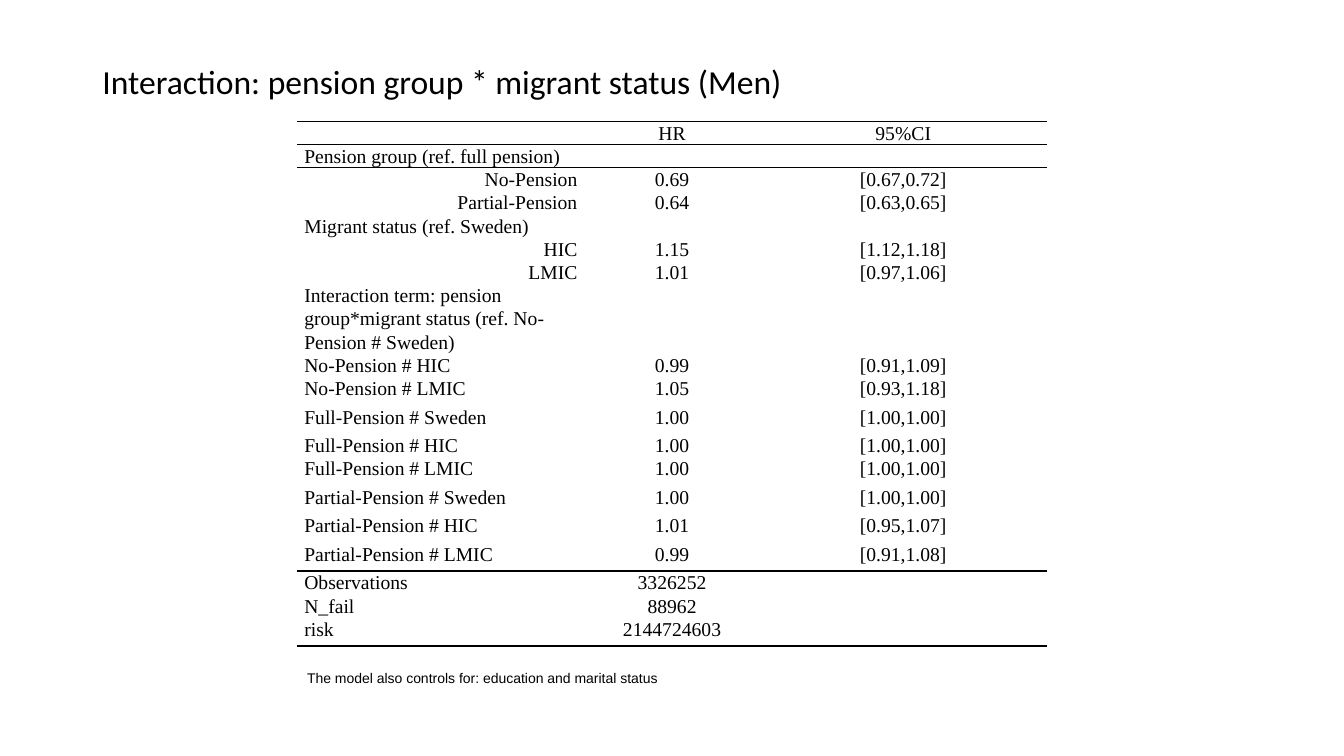
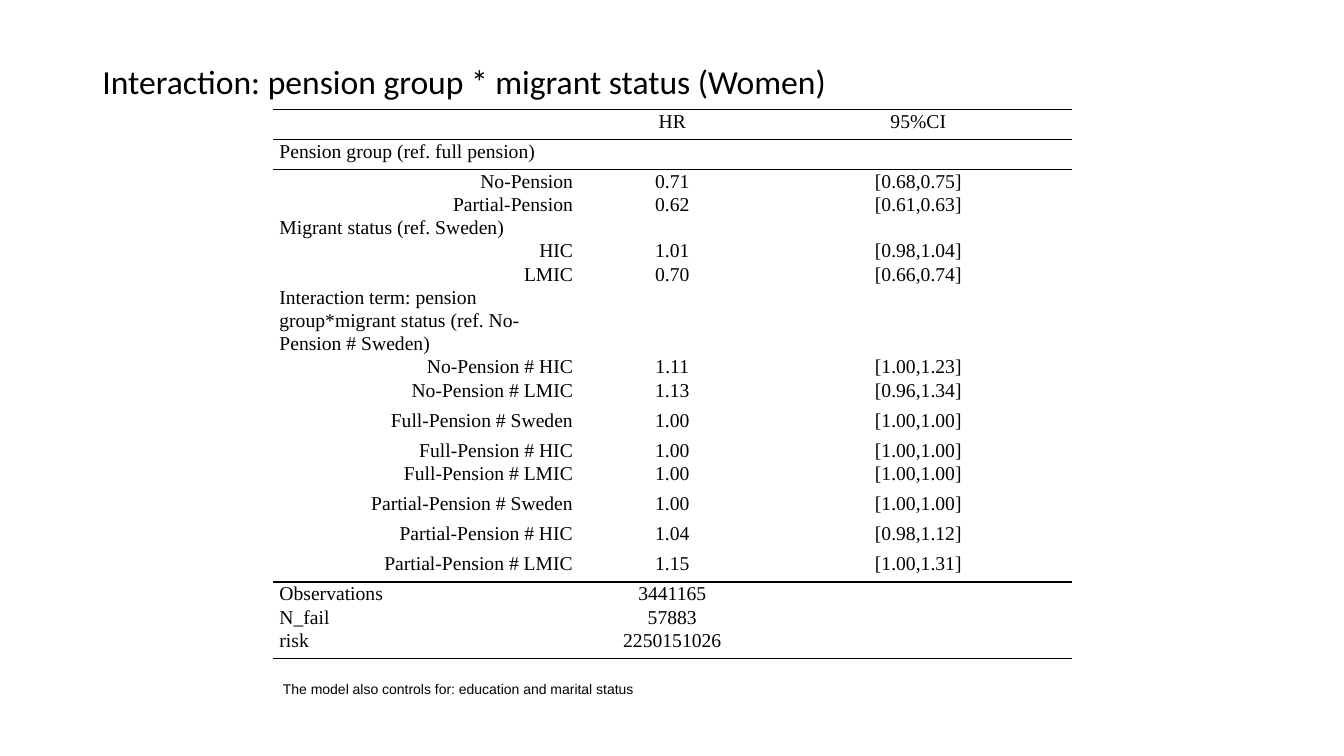
from dataclasses import dataclass

from lxml import etree
from pptx import Presentation
from pptx.dml.color import RGBColor
from pptx.enum.text import MSO_ANCHOR, MSO_AUTO_SIZE, PP_ALIGN
from pptx.oxml.ns import qn
from pptx.util import Pt

LEFT, MID, RIGHT = PP_ALIGN.LEFT, PP_ALIGN.CENTER, PP_ALIGN.RIGHT
CENTER = MSO_ANCHOR.MIDDLE
GROW = MSO_AUTO_SIZE.SHAPE_TO_FIT_TEXT

HUES = {"ink": "000000"}
HEAD = "Interaction: pension group * migrant status ({})"
NOTE = "The model also controls for: education and marital status"
LABELS = (
    "",
    "Pension group (ref. full pension)",
    "No-Pension",
    "Partial-Pension",
    "Migrant status (ref. Sweden)",
    "HIC",
    "LMIC",
    "Interaction term: pension group*migrant status (ref. No-Pension # Sweden)",
    "No-Pension # HIC",
    "No-Pension # LMIC",
    "Full-Pension # Sweden",
    "Full-Pension # HIC",
    "Full-Pension # LMIC",
    "Partial-Pension # Sweden",
    "Partial-Pension # HIC",
    "Partial-Pension # LMIC",
    "Observations",
    "N_fail",
    "risk",
)
TERM = 7  # the three-line row
RULES = {0, 1, 2, 16, 19}  # row edges that carry a line
TALL = {9, 10, 12, 13, 14, 15, 18}
LEVELS = {2, 3, 5, 6}
PAIRS = set(range(8, 16))
LOW, DEEP = 16.6, 49.7
ONE = ("1.00", "[1.00,1.00]")
NONE = ("", "")
TOP = ("HR", "95%CI")


@dataclass(frozen=True)
class Panel:
    sex: str
    left: float
    top: float
    cols: tuple[float, float, float]
    pad: float
    high: float
    tall: set[int]
    right: set[int]
    foot: float
    data: tuple[tuple[str, str], ...]


PANELS = (
    Panel(
        "Men", 212.2, 86.6, (205.5, 124.8, 205.5), 5.2, 20.4,
        TALL, LEVELS, 474.5,
        (
            TOP, NONE,
            ("0.69", "[0.67,0.72]"), ("0.64", "[0.63,0.65]"), NONE,
            ("1.15", "[1.12,1.18]"), ("1.01", "[0.97,1.06]"), NONE,
            ("0.99", "[0.91,1.09]"), ("1.05", "[0.93,1.18]"),
            ONE, ONE, ONE, ONE,
            ("1.01", "[0.95,1.07]"), ("0.99", "[0.91,1.08]"),
            ("3326252", ""), ("88962", ""), ("2144724603", ""),
        ),
    ),
    Panel(
        "Women", 195, 78, (219, 132.5, 219), 4.6, 21.5,
        TALL | {0, 1}, LEVELS | PAIRS, 482.5,
        (
            TOP, NONE,
            ("0.71", "[0.68,0.75]"), ("0.62", "[0.61,0.63]"), NONE,
            ("1.01", "[0.98,1.04]"), ("0.70", "[0.66,0.74]"), NONE,
            ("1.11", "[1.00,1.23]"), ("1.13", "[0.96,1.34]"),
            ONE, ONE, ONE, ONE,
            ("1.04", "[0.98,1.12]"), ("1.15", "[1.00,1.31]"),
            ("3441165", ""), ("57883", ""), ("2250151026", ""),
        ),
    ),
)


def write(par, text: str, face: str, size: float, side=LEFT) -> None:
    par.alignment = side
    run = par.add_run()
    run.text = text
    run.font.name = face
    run.font.size = Pt(size)
    run.font.color.rgb = RGBColor.from_string(HUES["ink"])


def edge(cell, row: int) -> None:
    """Draw the rules above and below a cell and clear its other borders."""
    props = cell._tc.get_or_add_tcPr()
    shown = {"lnL": False, "lnR": False, "lnT": row in RULES, "lnB": row + 1 in RULES}
    for tag, on in shown.items():
        line = etree.SubElement(props, qn(f"a:{tag}"), w=str(Pt(1)))
        if on:
            fill = etree.SubElement(line, qn("a:solidFill"))
            etree.SubElement(fill, qn("a:srgbClr"), val=HUES["ink"])
        else:
            etree.SubElement(line, qn("a:noFill"))
    cell.fill.background()


def put(cell, text: str, side, pad: float) -> None:
    """Fill a cell; an empty one gets a small font so its row stays low."""
    cell.margin_left = cell.margin_right = Pt(pad)
    cell.margin_top = cell.margin_bottom = 0
    par = cell.text_frame.paragraphs[0]
    if text:
        par.line_spacing = 1.07
        par.space_after = Pt(8)
        write(par, text, "Times New Roman", 14, side)
    else:
        etree.SubElement(par._p, qn("a:endParaRPr"), sz="1000")


def height(panel: Panel, row: int) -> float:
    if row == TERM:
        return DEEP
    return panel.high if row in panel.tall else LOW


def grid(slide, panel: Panel) -> None:
    tall = [height(panel, row) for row in range(len(LABELS))]
    frame = slide.shapes.add_table(
        len(LABELS), len(panel.cols), Pt(panel.left), Pt(panel.top),
        Pt(sum(panel.cols)), Pt(sum(tall)),
    )
    table = frame.table
    table.first_row = table.horz_banding = False
    for col, wide in zip(table.columns, panel.cols):
        col.width = Pt(wide)
    for row, (label, pair) in enumerate(zip(LABELS, panel.data)):
        table.rows[row].height = Pt(tall[row])
        first = RIGHT if row in panel.right else LEFT
        for col, text in enumerate((label, *pair)):
            cell = table.cell(row, col)
            edge(cell, row)
            put(cell, text, MID if col else first, panel.pad)


def title(slide, text: str) -> None:
    box = slide.shapes.title
    box.left, box.top, box.width, box.height = Pt(66), Pt(28.75), Pt(828), Pt(62)
    frame = box.text_frame
    frame.word_wrap = True
    frame.vertical_anchor = CENTER
    par = frame.paragraphs[0]
    par.line_spacing = 0.9
    write(par, text, "Calibri", 24)


def note(slide, panel: Panel) -> None:
    box = slide.shapes.add_textbox(Pt(panel.left), Pt(panel.foot), Pt(397), Pt(19.4))
    frame = box.text_frame
    frame.word_wrap = True
    frame.auto_size = GROW
    write(frame.paragraphs[0], NOTE, "Arial", 10)


def main() -> None:
    deck = Presentation()
    deck.slide_width, deck.slide_height = Pt(960), Pt(540)
    for panel in PANELS:
        slide = deck.slides.add_slide(deck.slide_layouts[5])
        title(slide, HEAD.format(panel.sex))
        grid(slide, panel)
        note(slide, panel)
    deck.save("out.pptx")


if __name__ == "__main__":
    main()
